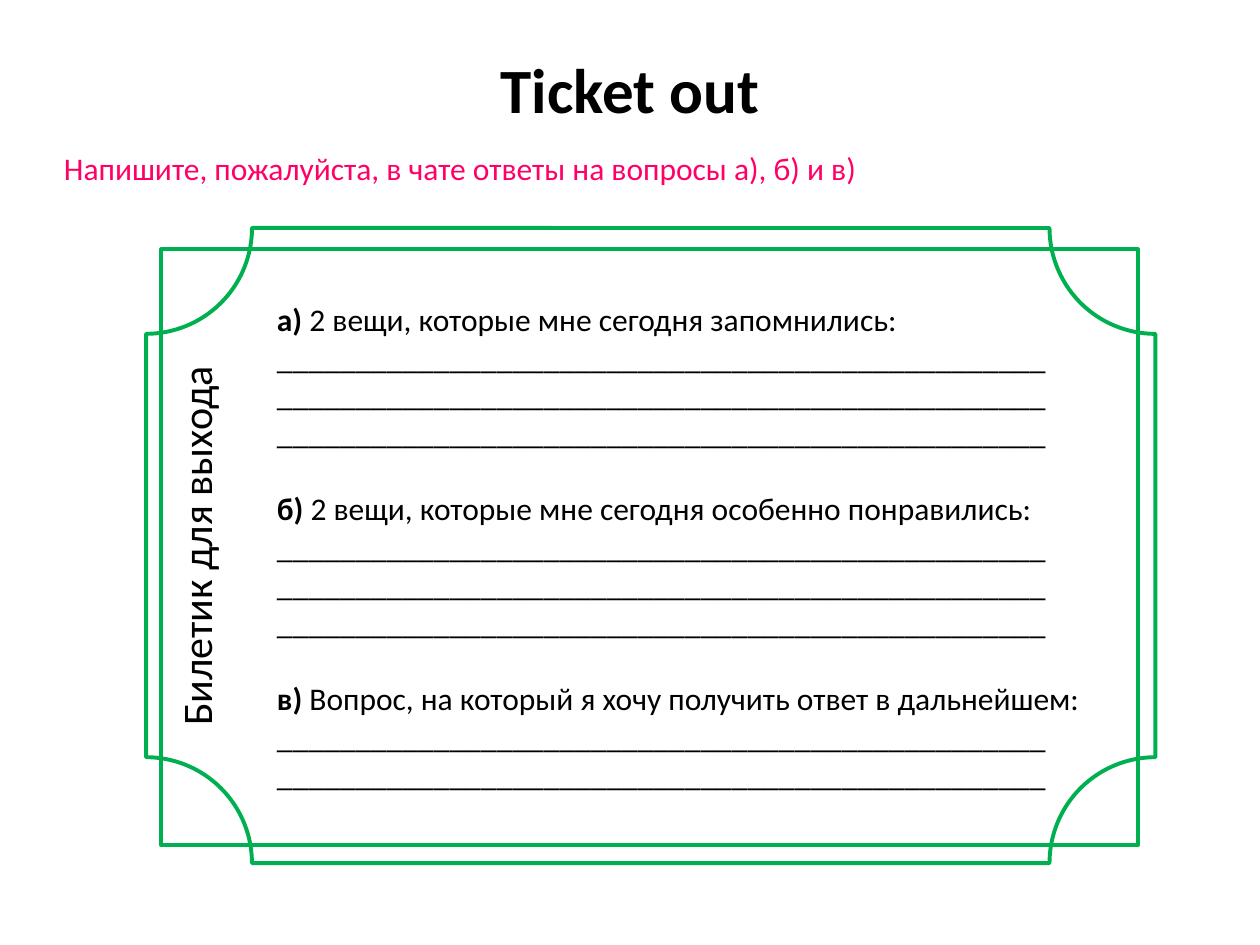
from dataclasses import dataclass

from pptx import Presentation
from pptx import util as u
from pptx.dml.color import RGBColor
from pptx.enum import shapes, text


@dataclass(frozen=True)
class Theme:
    font: str = "Calibri"
    ink: str = "000000"
    accent: str = "FF0066"
    border: str = "00B050"
    border_pt: float = 2.25
    title_pt: int = 36
    side_pt: int = 24
    body_pt: int = 18
    gap_pt: int = 22


class SlideBuilder:
    def __init__(self, slide, theme):
        self.slide = slide
        self.theme = theme

    def frame(self, kind, *box):
        """Add an unfilled outline shape."""
        sp = self.slide.shapes.add_shape(kind, *map(u.Inches, box))
        sp.shadow.inherit = False
        sp.fill.background()
        sp.line.color.rgb = RGBColor.from_string(self.theme.border)
        sp.line.width = u.Pt(self.theme.border_pt)
        return sp

    def textbox(self, *box, wrap=False, anchor=text.MSO_ANCHOR.TOP):
        sp = self.slide.shapes.add_textbox(*map(u.Inches, box))
        tf = sp.text_frame
        tf.word_wrap = wrap
        tf.vertical_anchor = anchor
        return sp

    def run(self, p, content, size, color=None, bold=False):
        r = p.add_run()
        r.text = content
        r.font.name = self.theme.font
        r.font.size = u.Pt(size)
        r.font.bold = bold
        r.font.color.rgb = RGBColor.from_string(color or self.theme.ink)

    def questions(self, tf, items, rule):
        """Add each question followed by its blank answer lines."""
        p = tf.paragraphs[0]
        size = self.theme.body_pt
        for i, (label, question, lines) in enumerate(items):
            if i:
                p = tf.add_paragraph()
                p.space_before = u.Pt(self.theme.gap_pt)
            self.run(p, label, size, bold=True)
            self.run(p, " " + question, size)
            for _ in range(lines):
                self.run(tf.add_paragraph(), rule, size)


def main():
    prs = Presentation()
    prs.slide_width, prs.slide_height = u.Inches(10), u.Inches(7.5)
    theme = Theme()
    s = SlideBuilder(prs.slides.add_slide(prs.slide_layouts[6]), theme)

    # Title
    sp = s.textbox(0.69, 0.17, 8.62, 1.14, wrap=True, anchor=text.MSO_ANCHOR.MIDDLE)
    p = sp.text_frame.paragraphs[0]
    p.alignment = text.PP_ALIGN.CENTER
    p.line_spacing = 0.9
    s.run(p, "Ticket out", theme.title_pt, bold=True)

    # Inner ticket frame
    s.frame(shapes.MSO_SHAPE.RECTANGLE, 1.28, 1.98, 7.75, 4.73)

    # Vertical ticket name
    sp = s.textbox(0.01, 4.07, 3.08, 0.5)
    sp.rotation = 270
    s.run(sp.text_frame.paragraphs[0], "Билетик для выхода", theme.side_pt)

    # Questions with answer lines
    sp = s.textbox(2.1, 2.33, 6.66, 4.04)
    s.questions(sp.text_frame, [
        ("а)", "2 вещи, которые мне сегодня запомнились:", 3),
        ("б)", "2 вещи, которые мне сегодня особенно понравились:", 3),
        ("в)", "Вопрос, на который я хочу получить ответ в дальнейшем:", 2),
    ], rule="_" * 49)

    # Outer ticket frame
    s.frame(shapes.MSO_SHAPE.PLAQUE, 1.16, 1.81, 8.01, 5.04)

    # Instruction
    sp = s.textbox(0.41, 1.13, 6.57, 0.4)
    s.run(sp.text_frame.paragraphs[0],
          "Напишите, пожалуйста, в чате ответы на вопросы а), б) и в)",
          theme.body_pt, theme.accent)

    prs.save("out.pptx")


if __name__ == "__main__":
    main()
